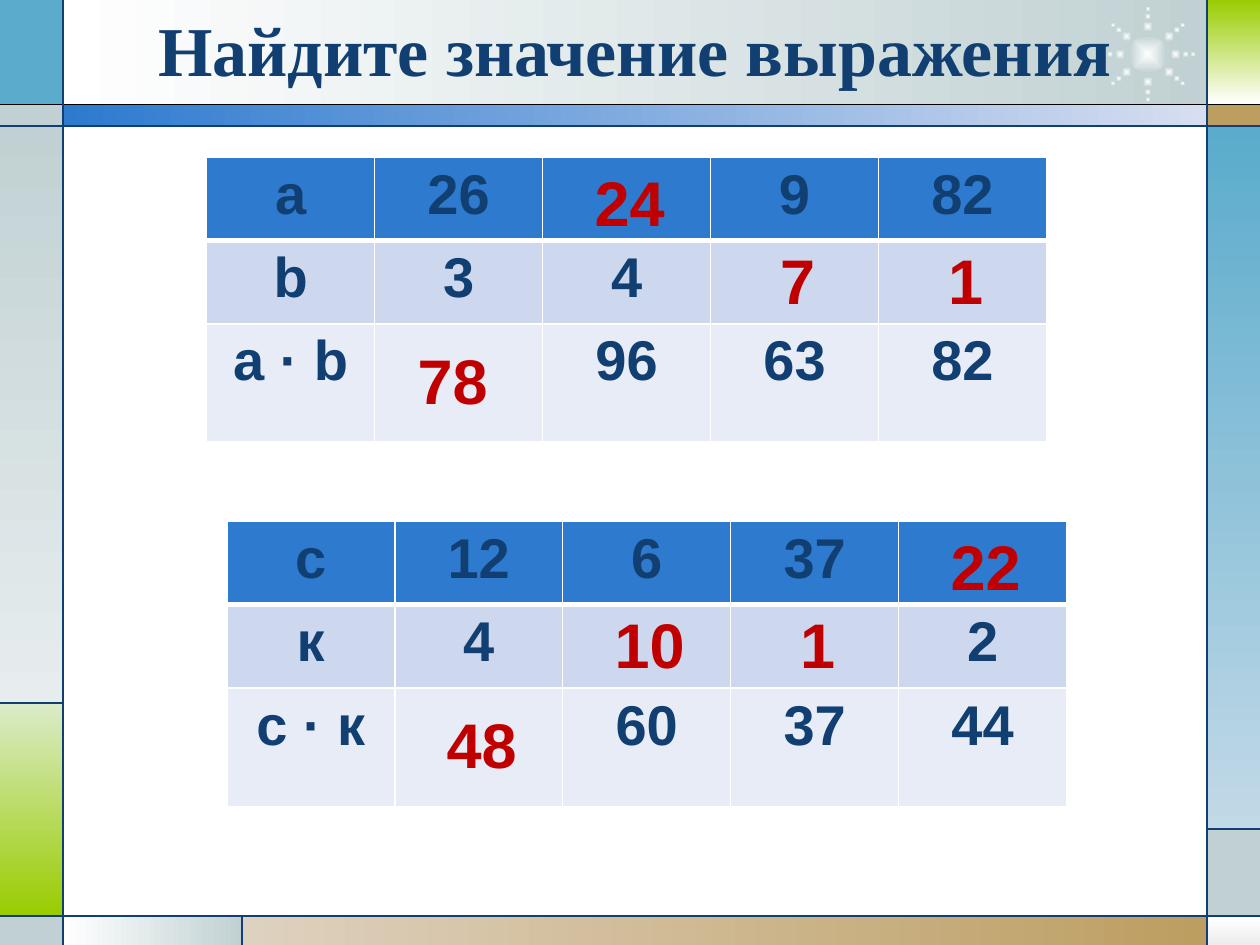
"""Multiplication exercise slide: two tables with the missing values in red."""
import math

import pptx
import pptx.dml.color
import pptx.enum.shapes
import pptx.enum.text
import pptx.oxml
import pptx.oxml.ns
import pptx.util
from lxml import etree

RGBColor = pptx.dml.color.RGBColor
Inches = pptx.util.Inches
Pt = pptx.util.Pt
SHAPE = pptx.enum.shapes.MSO_SHAPE
qn = pptx.oxml.ns.qn

WHITE = RGBColor(0xFF, 0xFF, 0xFF)
BLACK = RGBColor(0, 0, 0)
NAVY = RGBColor(0x11, 0x3F, 0x71)
BLUE = RGBColor(0x2D, 0x7A, 0xCF)
PALE_BLUE = RGBColor(0xD7, 0xDE, 0xF0)
TEAL = RGBColor(0x5A, 0xAB, 0xCC)
PALE_TEAL = RGBColor(0xC2, 0xD9, 0xE7)
GREY = RGBColor(0xC1, 0xD1, 0xD3)
PALE_GREY = RGBColor(0xE7, 0xED, 0xEE)
SILVER = RGBColor(0xED, 0xED, 0xED)
LIME = RGBColor(0x99, 0xCC, 0x00)
PALE_LIME = RGBColor(0xDB, 0xEB, 0xC9)
TAN = RGBColor(0xBD, 0x9E, 0x61)
PALE_TAN = RGBColor(0xDE, 0xD1, 0xBF)
RED = RGBColor(0xC0, 0, 0)
ROW_FILLS = [BLUE, RGBColor(0xCD, 0xD7, 0xED), RGBColor(0xE8, 0xEC, 0xF6)]

W, H = 10, 7.5
LEFT, FOOT, RIGHT = 0.5, 1.92, 9.58
HEAD, BODY, LIME_TOP, GREY_TOP, BOTTOM = 0.83, 1, 5.58, 6.58, 7.27

prs = pptx.Presentation()
prs.slide_width, prs.slide_height = Inches(W), Inches(H)
s = prs.slides.add_slide(prs.slide_layouts[5])


def add_block(kind, x1, y1, x2, y2, start, end, angle):
    sp = s.shapes.add_shape(kind, Inches(x1), Inches(y1), Inches(x2 - x1), Inches(y2 - y1))
    sp.shadow.inherit = False
    sp.line.fill.background()
    if start == end:
        sp.fill.solid()
        sp.fill.fore_color.rgb = start
    else:
        sp.fill.gradient()
        sp.fill.gradient_angle = -angle % 360
        for stop, color in zip(sp.fill.gradient_stops, (start, end)):
            stop.color.rgb = color
    return sp


def style(p, size, color, font="Arial"):
    p.alignment = pptx.enum.text.PP_ALIGN.CENTER
    p.font.size, p.font.name, p.font.bold = Pt(size), font, True
    p.font.color.rgb = color


panels = [
    (LEFT, 0, RIGHT, HEAD, WHITE, GREY, 0),
    (0, 0, LEFT, HEAD, TEAL, TEAL, 0),
    (0, HEAD, LEFT, BODY, GREY, GREY, 0),
    (0, BODY, LEFT, LIME_TOP, GREY, PALE_GREY, 90),
    (0, LIME_TOP, LEFT, BOTTOM, PALE_LIME, LIME, 90),
    (0, BOTTOM, LEFT, H, GREY, GREY, 0),
    (LEFT, BOTTOM, FOOT, H, WHITE, GREY, 0),
    (FOOT, BOTTOM, RIGHT, H, PALE_TAN, TAN, 0),
    (RIGHT, BOTTOM, W, H, WHITE, SILVER, 90),
    (RIGHT, GREY_TOP, W, BOTTOM, GREY, GREY, 0),
    (RIGHT, BODY, W, GREY_TOP, TEAL, PALE_TEAL, 90),
    (RIGHT, HEAD, W, BODY, TAN, TAN, 0),
    (RIGHT, 0, W, HEAD, LIME, WHITE, 90),
    (LEFT, HEAD, RIGHT, BODY, BLUE, PALE_BLUE, 0),
]
for panel in panels:
    add_block(SHAPE.RECTANGLE, *panel)

STAR_X, STAR_Y = 9.11, 0.43
dots = [(0, 0, 0.3)]
for angle in (0, 40, 90, 140, 180, 220, 270, 320):
    for radius, size in ((0.22, 0.08), (0.3, 0.05), (0.36, 0.04)):
        dots.append((angle, radius, size))
for angle, radius, size in dots:
    x = STAR_X + radius * math.cos(math.radians(angle)) - size / 2
    y = STAR_Y + radius * math.sin(math.radians(angle)) - size / 2
    sp = add_block(SHAPE.OVAL, x, y, x + size, y + size, WHITE, GREY, 0)
    grad = sp.element.spPr.find(qn("a:gradFill"))
    grad.remove(grad.find(qn("a:lin")))
    shade = etree.SubElement(grad, qn("a:path"), path="shape")
    etree.SubElement(shade, qn("a:fillToRect"), l="50000", t="50000", r="50000", b="50000")

rules = [
    (0, HEAD, W, HEAD, BLACK),
    (0, BODY, W, BODY, NAVY),
    (0, BOTTOM, W, BOTTOM, NAVY),
    (LEFT, 0, LEFT, H, NAVY),
    (RIGHT, 0, RIGHT, H, NAVY),
    (LEFT, LIME_TOP, 0, LIME_TOP, NAVY),
    (FOOT, BOTTOM, FOOT, H, NAVY),
    (RIGHT, GREY_TOP, W, GREY_TOP, NAVY),
]
for *ends, color in rules:
    line = s.shapes.add_connector(pptx.enum.shapes.MSO_CONNECTOR.STRAIGHT, *map(Inches, ends))
    line.line.color.rgb = color
    line.line.width = Pt(0.75)
    etree.SubElement(line.element.spPr, qn("a:effectLst"))

title = s.shapes.title
title.element.getparent().append(title.element)
title.left, title.top, title.width, title.height = map(Inches, (0.86, 0, 8.36, 0.77))
tf = title.text_frame
tf.text = "Найдите значение выражения"
tf.vertical_anchor = pptx.enum.text.MSO_ANCHOR.MIDDLE
style(tf.paragraphs[0], 40, NAVY, "Times New Roman")

COL = W / 7.5
ROWS = [0.66, 0.66, 0.94]
ANSWER_TOPS = [0, 0.62, 1.41]
exercises = [
    (1.64, 1.25,
     [["а", "26", "", "9", "82"], ["b", "3", "4", "", ""], ["a · b", "", "96", "63", "82"]],
     [("78", 1, 2, 0.23), ("24", 2, 0, 0.3), ("7", 3, 1, 0.3), ("1", 4, 1, 0.3)]),
    (1.8, 4.14,
     [["с", "12", "6", "37", ""], ["к", "4", "", "", "2"], ["с · к", "", "60", "37", "44"]],
     [("48", 1, 2, 0.3), ("10", 2, 1, 0.3), ("1", 3, 1, 0.3), ("22", 4, 0, 0.3)]),
]
for left, top, values, _ in exercises:
    frame = s.shapes.add_table(3, 5, Inches(left), Inches(top), Inches(5 * COL), Inches(sum(ROWS)))
    table = frame.table
    for column in table.columns:
        column.width = Inches(COL)
    for i, row in enumerate(values):
        table.rows[i].height = Inches(ROWS[i])
        for j, text in enumerate(row):
            cell = table.cell(i, j)
            tcPr = cell._tc.get_or_add_tcPr()
            for side in "LRTB":
                width = 3 if (i, side) in ((0, "B"), (1, "T")) else 1
                ln = etree.SubElement(tcPr, qn("a:ln" + side), w=str(Pt(width)))
                fill = etree.SubElement(ln, qn("a:solidFill"))
                etree.SubElement(fill, qn("a:srgbClr"), val=str(WHITE))
            cell.fill.solid()
            cell.fill.fore_color.rgb = ROW_FILLS[i]
            if text:
                cell.text = text
                style(cell.text_frame.paragraphs[0], 32, NAVY)

for left, top, _, answers in exercises:
    for text, j, i, indent in answers:
        x, y = left + j * COL + indent, top + ANSWER_TOPS[i]
        sp = s.shapes.add_textbox(Inches(x), Inches(y), Inches(0.78), Inches(0.71))
        tf = sp.text_frame
        tf.word_wrap = True
        tf.text = text
        style(tf.paragraphs[0], 36, RED)

prs.save("out.pptx")
